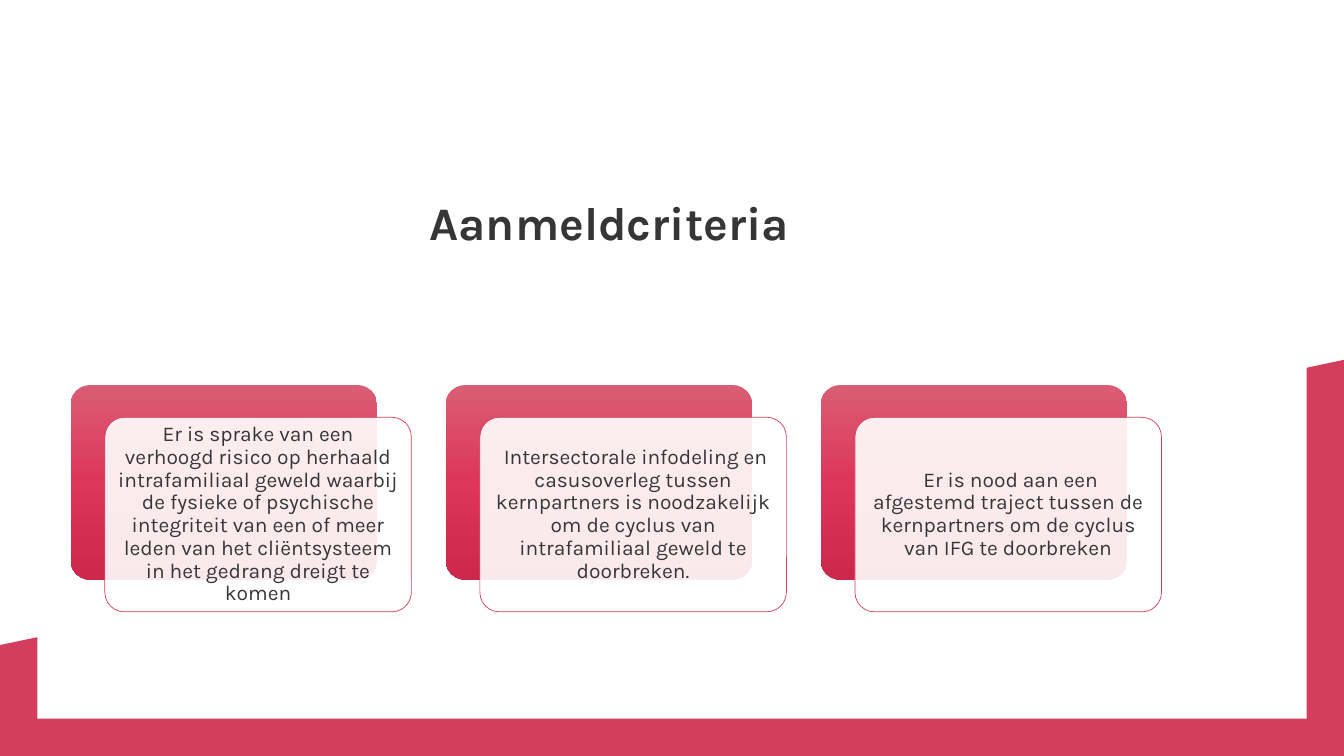
"""Build the slide listing the three referral criteria."""
from copy import deepcopy
from dataclasses import dataclass

from lxml import etree
from pptx import Presentation
from pptx.dml.color import RGBColor
from pptx.enum.shapes import MSO_SHAPE
from pptx.enum.text import MSO_ANCHOR, PP_ALIGN
from pptx.oxml.ns import qn
from pptx.slide import Slide
from pptx.text.text import TextFrame
from pptx.util import Inches, Pt

RECT = MSO_SHAPE.RECTANGLE
ROUNDED = MSO_SHAPE.ROUNDED_RECTANGLE
CENTER = PP_ALIGN.CENTER
MIDDLE = MSO_ANCHOR.MIDDLE
BOTTOM = MSO_ANCHOR.BOTTOM

FONT = "Karla"
WHITE = RGBColor(0xFF, 0xFF, 0xFF)
INK = RGBColor(0x37, 0x36, 0x36)
CRIMSON = RGBColor(0xD4, 0x3E, 0x5E)
GRADIENT = (
    RGBColor(0xDA, 0x5E, 0x73),
    RGBColor(0xDC, 0x36, 0x5A),
    RGBColor(0xCB, 0x28, 0x4B),
)

SLIDE_W, SLIDE_H = 13.33, 7.5
MARGIN = 0.37
CARD_W, CARD_H = 3.04, 1.93
CARD_LEFT, CARD_TOP, CARD_PITCH = 0.7, 3.82, 3.72
PANEL_DX, PANEL_DY = 0.34, 0.32


@dataclass(frozen=True)
class Criterion:
    """Text of one card and its left edge in inches."""
    left: float
    text: str


TEXTS = (
    "Er is sprake van een verhoogd risico op herhaald intrafamiliaal geweld "
    "waarbij de fysieke of psychische integriteit van een of meer leden van "
    "het cliëntsysteem in het gedrang dreigt te komen",
    " Intersectorale infodeling en casusoverleg tussen kernpartners is "
    "noodzakelijk om de cyclus van intrafamiliaal geweld te doorbreken.",
    " Er is nood aan een afgestemd traject tussen de kernpartners om de cyclus "
    "van IFG te doorbreken",
)
CRITERIA = [Criterion(CARD_LEFT + i * CARD_PITCH, t) for i, t in enumerate(TEXTS)]


def set_text(tf: TextFrame, text: str, size: float, bold: bool,
             anchor: MSO_ANCHOR, inset: float) -> None:
    """Fill a text frame with one centred paragraph."""
    tf.word_wrap = True
    tf.vertical_anchor = anchor
    tf.margin_left = tf.margin_right = Inches(inset)
    tf.margin_top = tf.margin_bottom = Inches(inset)
    p = tf.paragraphs[0]
    p.text = text
    p.alignment = CENTER
    p.line_spacing = 0.9
    p.space_before = Pt(0)
    p.font.name = FONT
    p.font.size = Pt(size)
    p.font.bold = bold
    p.font.color.rgb = INK


def add_frame(s: Slide) -> None:
    """Draw the slanted crimson backdrop and the white page on it."""
    builder = s.shapes.build_freeform(Inches(SLIDE_W), Inches(3.57))
    builder.add_line_segments([
        (Inches(SLIDE_W), Inches(SLIDE_H)),
        (Inches(0), Inches(SLIDE_H)),
        (Inches(0), Inches(6.4)),
    ])
    backdrop = builder.convert_to_shape()
    page = s.shapes.add_shape(
        RECT, Inches(MARGIN), Inches(MARGIN),
        Inches(SLIDE_W - 2 * MARGIN), Inches(SLIDE_H - 2 * MARGIN))
    for sp, color in ((backdrop, CRIMSON), (page, WHITE)):
        sp.shadow.inherit = False
        sp.fill.solid()
        sp.fill.fore_color.rgb = color
        sp.line.fill.background()


def add_title(s: Slide) -> None:
    """Format the title placeholder and bring it in front of the page."""
    title = s.shapes.title
    title.left, title.top = Inches(0.7), Inches(1.34)
    title.width, title.height = Inches(10.81), Inches(1.15)
    set_text(title.text_frame, "Aanmeldcriteria ", 33.3, True, BOTTOM, 0)
    s.shapes._spTree.append(title._element)


def add_card(s: Slide, criterion: Criterion) -> None:
    """Draw a gradient block with a translucent text panel over it."""
    block, panel = (
        s.shapes.add_shape(
            ROUNDED, Inches(criterion.left + dx), Inches(CARD_TOP + dy),
            Inches(CARD_W), Inches(CARD_H))
        for dx, dy in ((0, 0), (PANEL_DX, PANEL_DY)))
    for sp in (block, panel):
        sp.shadow.inherit = False
        sp.adjustments[0] = 0.1

    block.line.fill.background()
    block.fill.gradient()
    block.fill.gradient_angle = 270
    stops = block._element.spPr.find(qn("a:gradFill")).find(qn("a:gsLst"))
    stops.insert(1, deepcopy(stops[0]))
    for i, (stop, color) in enumerate(zip(block.fill.gradient_stops, GRADIENT)):
        stop.position = i / 2
        stop.color.rgb = color

    panel.fill.solid()
    panel.fill.fore_color.rgb = WHITE
    white = panel._element.spPr.find(qn("a:solidFill")).find(qn("a:srgbClr"))
    etree.SubElement(white, qn("a:alpha"), val="90000")
    panel.line.color.rgb = CRIMSON
    panel.line.width = Pt(0.5)
    set_text(panel.text_frame, criterion.text, 15, False, MIDDLE, 0.06)


def main() -> None:
    """Assemble and save the presentation."""
    prs = Presentation()
    prs.slide_width, prs.slide_height = Inches(SLIDE_W), Inches(SLIDE_H)
    s = prs.slides.add_slide(prs.slide_layouts[5])
    add_frame(s)
    add_title(s)
    for criterion in CRITERIA:
        add_card(s, criterion)
    prs.save("out.pptx")


if __name__ == "__main__":
    main()
